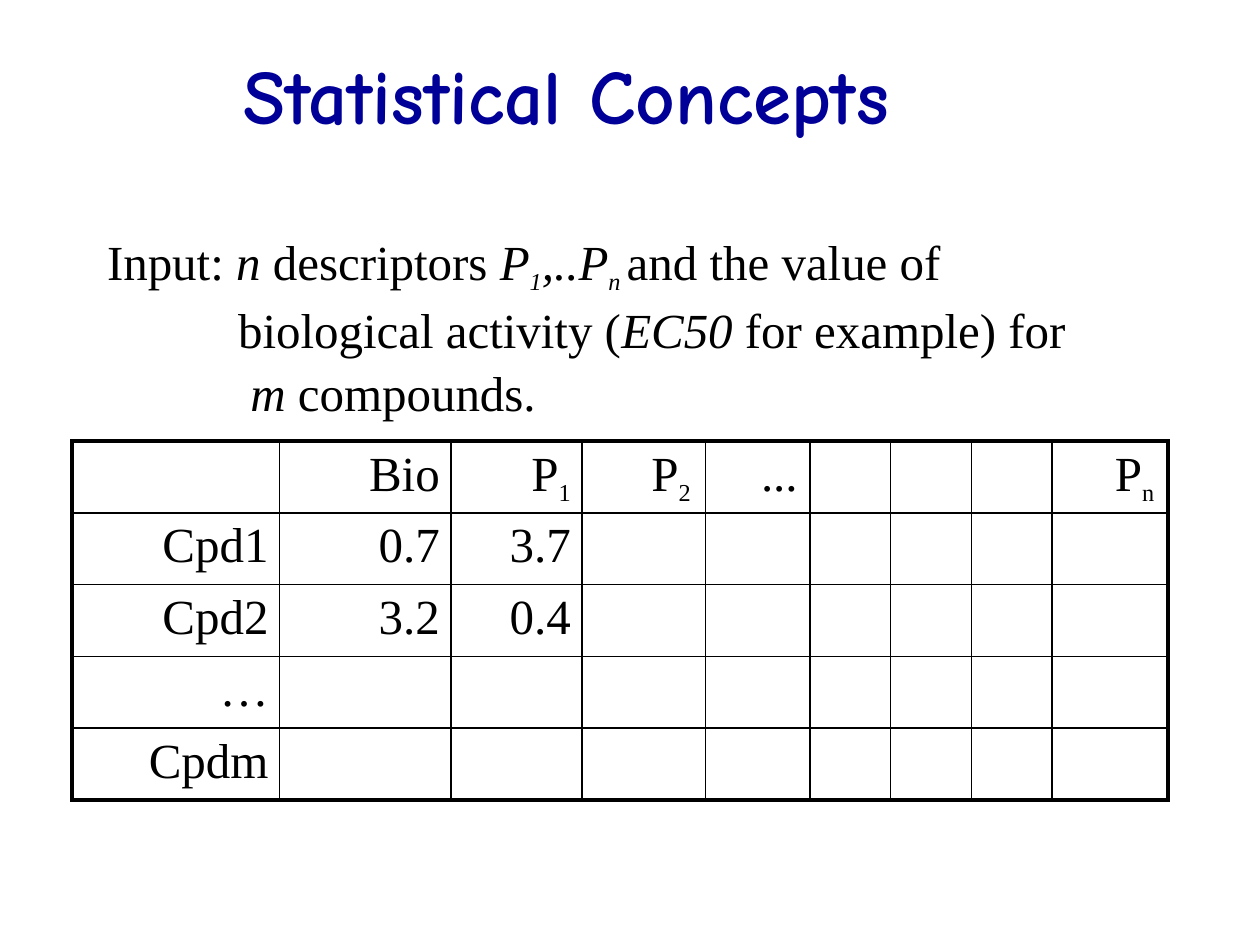
import pptx
import pptx.util
import pptx.dml.color
import pptx.enum.text
import pptx.oxml
import pptx.oxml.ns
from pptx.util import Inches

ALIGN = pptx.enum.text.PP_ALIGN


def rgb(value):
    return pptx.dml.color.RGBColor.from_string(value)


class Deck:
    font = "Times New Roman"
    title_font = "Comic Neue"
    ink = "000000"
    title_color = "000098"
    size = 28
    sub_size = 24

    def __init__(self):
        self.prs = pptx.Presentation()
        self.prs.slide_width, self.prs.slide_height = Inches(10), Inches(7.5)
        self.s = self.prs.slides.add_slide(self.prs.slide_layouts[6])

    def box(self, x, y, w, h, top=0.05):
        tf = self.s.shapes.add_textbox(Inches(x), Inches(y), Inches(w), Inches(h)).text_frame
        tf.word_wrap = True
        tf.margin_left = tf.margin_right = tf.margin_bottom = 0
        tf.margin_top = Inches(top)
        return tf

    def title(self, text, *at):
        tf = self.box(*at, top=0.01)
        tf.text = text
        p = tf.paragraphs[0]
        p.space_before = pptx.util.Pt(1)
        f = p.runs[0].font
        f.name, f.size, f.bold = self.title_font, pptx.util.Pt(44), True
        f.color.rgb = rgb(self.title_color)

    def runs(self, p, parts):
        """Add (text, style) runs; style holds i for italic, s for subscript."""
        for text, style in parts:
            r = p.add_run()
            r.text = text
            f = r.font
            f.name, f.italic = self.font, "i" in style
            f.size = pptx.util.Pt(self.sub_size if "s" in style else self.size)
            f.color.rgb = rgb(self.ink)
            if "s" in style:
                r._r.get_or_add_rPr().set("baseline", "-24000")

    def indent(self, p, left, first=0):
        pPr = p._p.get_or_add_pPr()
        pPr.set("marL", str(Inches(left)))
        pPr.set("indent", str(Inches(first)))

    def paragraph(self, lines, *at):
        p = self.box(*at).paragraphs[0]
        p.line_spacing, p.space_before = 1.07, pptx.util.Pt(3.3)
        self.indent(p, 1.07, -1.04)
        for i, parts in enumerate(lines):
            if i:
                p.add_line_break()
            self.runs(p, parts)

    def borders(self, cell, widths):
        tcPr = cell._tc.get_or_add_tcPr()
        for i, (side, width) in enumerate(zip("LRTB", widths)):
            tcPr.insert(i, pptx.oxml.parse_xml(
                f'<a:ln{side} {pptx.oxml.ns.nsdecls("a")} w="{pptx.util.Pt(width)}">'
                f'<a:solidFill><a:srgbClr val="{self.ink}"/></a:solidFill></a:ln{side}>'))

    def table(self, x, y, cols, row_h, rows, indents):
        n, m = len(rows), len(cols)
        t = self.s.shapes.add_table(n, m, Inches(x), Inches(y),
                                    Inches(sum(cols)), Inches(row_h * n)).table
        t.first_row = t.horz_banding = False
        for col, w in zip(t.columns, cols):
            col.width = Inches(w)
        for i, row in enumerate(rows):
            t.rows[i].height = Inches(row_h)
            for j in range(m):
                cell = t.cell(i, j)
                cell.fill.background()
                edges = (j == 0, j == m - 1, i == 0, i == n - 1)
                self.borders(cell, [2.25 if edge else 1 for edge in edges])
                cell.margin_left = cell.margin_bottom = 0
                cell.margin_top = Inches(0.05)
                cell.margin_right = 0 if j in indents else Inches(0.09)
                if j < len(row) and row[j]:
                    p = cell.text_frame.paragraphs[0]
                    p.space_before = pptx.util.Pt(3.7)
                    if j in indents:
                        self.indent(p, indents[j])
                    else:
                        p.alignment = ALIGN.RIGHT
                    self.runs(p, row[j])


def plain(*texts):
    return [[(text, "")] if text else None for text in texts]


def descriptor(index):
    return [("P", ""), (index, "s")]


def main():
    d = Deck()

    # Title
    d.title("Statistical Concepts", 1.93, 0.37, 5.98, 0.76)

    # Input description
    d.paragraph([
        [("Input: ", ""), ("n ", "i"), ("descriptors ", ""), ("P", "i"), ("1", "is"),
         (",..P", "i"), ("n ", "is"), ("and the value of", "")],
        [("biological activity (", ""), ("EC50 ", "i"), ("for example) for", "")],
        [(" m ", "i"), ("compounds.", "")],
    ], 0.82, 1.75, 7.67, 1.56)

    # Compound and descriptor table
    header = [None, *plain("Bio"), descriptor("1"), descriptor("2"),
              *plain("...", "", "", ""), descriptor("n")]
    rows = [header, plain("Cpd1", "0.7", "3.7"), plain("Cpd2", "3.2", "0.4"),
            plain("…"), plain("Cpdm")]
    cols = [1.65, 1.36, 1.04, 0.98, 0.83, 0.64, 0.64, 0.64, 0.92]
    d.table(0.57, 3.5, cols, 0.57, rows, {3: 0.55, 4: 0.44, 8: 0.5})

    d.prs.save("out.pptx")


if __name__ == "__main__":
    main()
